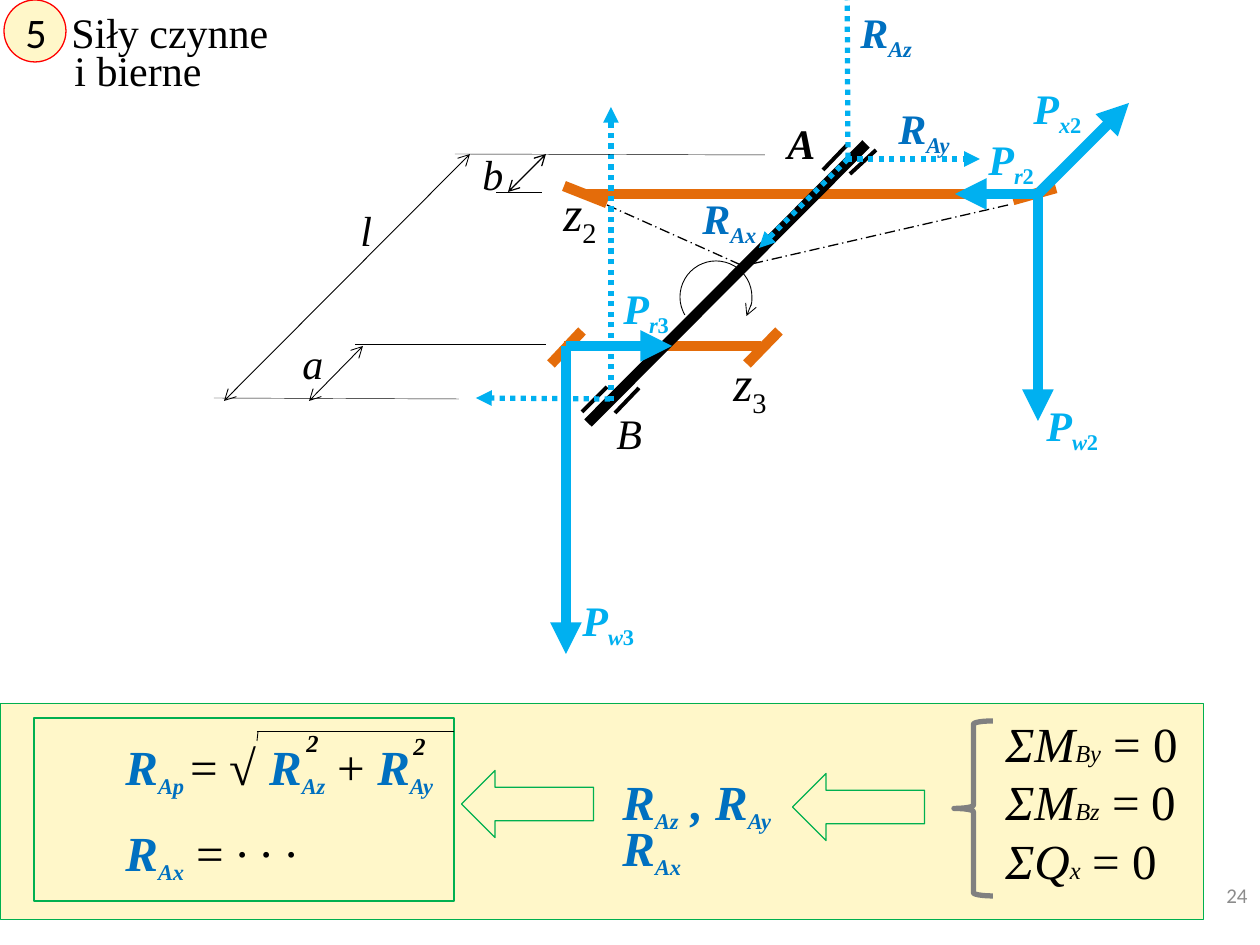
from lxml.etree import SubElement
from pptx import Presentation
from pptx.dml.color import RGBColor as RGB
from pptx.enum.dml import MSO_LINE as Dash
from pptx.enum.shapes import MSO_CONNECTOR as Conn, MSO_SHAPE as Kind
from pptx.enum.text import MSO_ANCHOR as Anchor, MSO_AUTO_SIZE as Fit, PP_ALIGN as Align
from pptx.oxml.ns import qn
from pptx.util import Emu, Pt

PX = 914400 / 126  # one px in EMU
THEME = {
    "color": {"black": "000000", "sky": "00B0F0", "blue": "0070C0", "rust": "E46C0A",
              "cream": "FFF7C9", "green": "00B050", "red": "FF0000",
              "gray": "808080", "pale": "8C8C8C"},
    "size": {"eq": 28, "body": 24, "sub": 22, "small": 14, "page": 12},
    "serif": "Times New Roman",
    "sans": "Calibri",
}
INK = {name: RGB.from_string(code) for name, code in THEME["color"].items()}

deck = Presentation()
deck.slide_width, deck.slide_height = Emu(round(1260 * PX)), Emu(round(945 * PX))
slide = deck.slides.add_slide(deck.slide_layouts[6])
parts = slide.shapes


def stroke(ends, ink, width, head=None, tail=None, dash=None):
    """Draw a straight line, with optional arrowheads and dashes."""
    wire = parts.add_connector(Conn.STRAIGHT, *[round(n * PX) for n in ends])
    wire.line.color.rgb = INK[ink]
    wire.line.width = Pt(width)
    if dash:
        wire.line.dash_style = dash
    for tag, kind in (("a:headEnd", head), ("a:tailEnd", tail)):
        if kind:
            SubElement(wire.get_or_add_ln(), qn(tag), type=kind)
    SubElement(wire._element.spPr, qn("a:effectLst"))


def label(spot, *rows, face="serif"):
    """Add text; a run is (text, size, ink, flags): b bold, i italic, s subscript."""
    box = parts.add_textbox(*[round(n * PX) for n in spot])
    frame = box.text_frame
    frame.word_wrap = True
    frame.auto_size = Fit.SHAPE_TO_FIT_TEXT
    for i, row in enumerate(rows):
        para = frame.add_paragraph() if i else frame.paragraphs[0]
        for text, size, ink, flags in row:
            run = para.add_run()
            run.text = text
            form = {"name": THEME[face], "size": Pt(THEME["size"][size]),
                    "bold": "b" in flags, "italic": "i" in flags}
            for key, value in form.items():
                setattr(run.font, key, value)
            run.font.color.rgb = INK[ink]
            if "s" in flags:
                run._r.get_or_add_rPr().set("baseline", "-25000")
    return frame


# Panels, badge, rotation arc, block arrows and brace
for kind, spot, fill, ink, width, turn in (
    (Kind.RECTANGLE, (0, 703, 1203, 217), "cream", "green", 0.5, 0),
    (Kind.RECTANGLE, (34, 718, 420, 183), "cream", "green", 0.75, 0),
    (Kind.OVAL, (4, 0, 62, 62), "cream", "red", 0.75, 0),
    (Kind.ARC, (680, 261, 72, 72), None, "black", 0.5, 0),
    (Kind.DOWN_ARROW, (494, 738, 67, 132), None, "green", 0.75, 90),
    (Kind.DOWN_ARROW, (825, 741, 67, 132), None, "green", 0.75, 90),
    (Kind.LEFT_BRACE, (954, 721, 39, 175), None, "gray", 3, 0),
):
    shape = parts.add_shape(kind, *[round(n * PX) for n in spot])
    shape.shadow.inherit = False
    shape.rotation = turn
    shape.line.color.rgb = INK[ink]
    shape.line.width = Pt(width)
    if fill:
        shape.fill.solid()
        shape.fill.fore_color.rgb = INK[fill]
    else:
        shape.fill.background()
    if kind == Kind.ARC:
        shape.adjustments[0], shape.adjustments[1] = 89.96, 19.2
        SubElement(shape.get_or_add_ln(), qn("a:tailEnd"), type="arrow")

# Gear wheels and shaft
for ends in ((585, 194, 1040, 194), (564, 346, 761, 346), (607, 203, 564, 186),
             (779, 331, 747, 364), (582, 331, 551, 364), (1056, 188, 1013, 200)):
    stroke(ends, "rust", 6)
stroke((866, 144, 588, 423), "black", 6)

# Bearings
for ends in ((847, 145, 823, 170), (876, 150, 850, 174),
             (639, 388, 615, 413), (607, 387, 582, 412)):
    stroke(ends, "black", 2.25)

# Cone axes
for ends in ((1008, 205, 747, 265), (607, 205, 741, 265)):
    stroke(ends, "black", 0.75, dash=Dash.LONG_DASH_DOT)

# Active forces
for ends in ((1038, 195, 1038, 421), (566, 346, 566, 654), (566, 346, 672, 346),
             (1038, 194, 1129, 103), (1040, 194, 955, 194)):
    stroke(ends, "sky", 6, tail="triangle")

# Reactions
for ends in ((848, 159, 759, 248), (848, 158, 847, -50), (611, 401, 611, 107),
             (610, 399, 476, 398), (847, 159, 980, 159)):
    stroke(ends, "sky", 3, tail="triangle", dash=Dash.ROUND_DOT)

# Dimension lines and the root bar
for ends in ((765, 155, 455, 154), (542, 192, 496, 192),
             (546, 344, 355, 344), (459, 399, 214, 398)):
    stroke(ends, "black", 0.25)
for ends, width in (((470, 154, 224, 401), 0.5), ((363, 346, 309, 401), 0.5),
                    ((546, 154, 508, 192), 0.75)):
    stroke(ends, "black", width, head="arrow", tail="arrow")
for ends in ((257, 731, 454, 731), (258, 732, 257, 741)):
    stroke(ends, "black", 0.5)

# Heading
label((13, 0, 47, 63), [("5", "body", "black", "")], face="sans")
label((59, 0, 288, 63), [("Siły czynne", "body", "black", "")])
label((62, 38, 156, 63), [("i bierne", "body", "black", "")])

# Force names
for left, top, sub, num in ((570, 588, "w", "3"), (611, 276, "r", "3"),
                            (1034, 393, "w", "2"), (976, 127, "r", "2"),
                            (1021, 76, "x", "2")):
    label((left, top, 104, 63), [("P", "body", "sky", "bi"),
                                 (sub, "sub", "sky", "bis"), (num, "sub", "sky", "bs")])
for left, top, sub in ((848, 0, "Az"), (690, 186, "Ax"), (886, 96, "Ay")):
    label((left, top, 98, 63), [("R", "body", "blue", "bi"), (sub, "sub", "blue", "bis")])

# Wheels, supports and dimensions
for left, top, num in ((721, 346, "3"), (551, 176, "2")):
    label((left, top, 80, 72), [("z", "eq", "black", "i"), (num, "eq", "black", "s")])
for left, top, text, flags in ((775, 111, "A", "bi"), (604, 401, "B", "i"),
                               (348, 198, "l", "i"), (290, 331, "a", "i"),
                               (470, 142, "b", "i")):
    label((left, top, 69, 63), [(text, "body", "black", flags)])

# Resultant equations
base = ("R", "eq", "blue", "bi")
ax, ay, az, ap = [("A" + axis, "sub", "blue", "bis") for axis in "xyzp"]
label((113, 730, 344, 72), [base, ap, (" ", "small", "blue", "bi"), ("= √ ", "eq", "black", ""),
                            base, az, (" + ", "eq", "black", ""), base, ay])
for left, top in ((401, 725), (294, 722)):
    label((left, top, 58, 43), [("2", "small", "black", "bi")])
label((113, 816, 221, 72), [base, ax, (" ", "eq", "blue", "bi"), ("= ∙ ∙ ∙", "eq", "black", "")])
label((610, 765, 197, 72), [base, az, (" , R", "eq", "blue", "bi"), ay])
label((610, 811, 106, 72), [base, ax])

# Equilibrium conditions
label((993, 707, 210, 190), *[
    [(sign, "eq", "black", "i"), (sub, "small", "black", "i"), (" = 0", "eq", "black", "")]
    for sign, sub in (("ΣM", "By"), ("ΣM", "Bz"), ("ΣQ", "x"))])

# Page number
page = label((1179, 869, 81, 53), [("24", "page", "pale", "")], face="sans")
page.auto_size = Fit.NONE
page.vertical_anchor = Anchor.MIDDLE
page.paragraphs[0].alignment = Align.RIGHT

deck.save("out.pptx")
